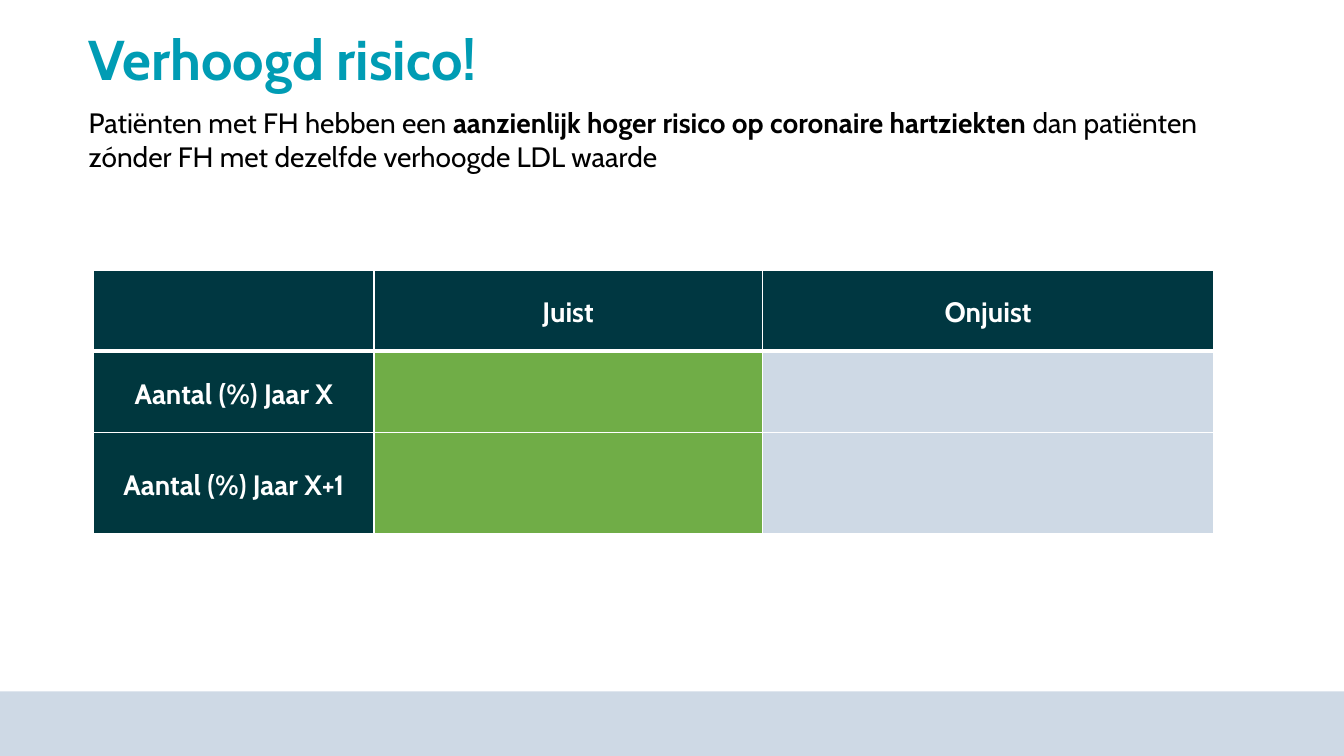
from dataclasses import dataclass

from lxml import etree
from pptx import Presentation
from pptx import util as u
from pptx.dml.color import RGBColor
from pptx.enum import shapes, text
from pptx.oxml.ns import qn

EMU_PER_PX = 9144  # 100 px to the inch


@dataclass(frozen=True)
class Theme:
    font: str = "Cabin"
    title_size: int = 40
    text_size: int = 20
    title: str = "009CB4"
    ink: str = "000000"
    white: str = "FFFFFF"
    band: str = "CED9E5"
    header: str = "003741"
    row_label: str = "00373E"
    correct: str = "70AD47"


@dataclass(frozen=True)
class Box:
    left: int
    top: int
    width: int
    height: int

    def emu(self) -> tuple[int, ...]:
        return tuple(px(v) for v in (self.left, self.top, self.width, self.height))


@dataclass(frozen=True)
class Row:
    height: int
    labels: tuple[str, str, str]
    fills: tuple[str, str, str]
    bottom_line: float = 1


THEME = Theme()
SLIDE = Box(0, 0, 1333, 750)
FOOTER_BAND = Box(0, 686, 1333, 64)
TITLE = Box(78, 27, 1068, 71)
STATEMENT = Box(78, 100, 1122, 77)
TABLE = Box(93, 268, 1111, 261)
COLUMNS = (278, 385, 448)
ANSWER_FILLS = (THEME.row_label, THEME.correct, THEME.band)
ROWS = (
    Row(80, ("", "Juist", "Onjuist"), (THEME.header,) * 3, bottom_line=3),
    Row(81, ("Aantal (%) Jaar X", "", ""), ANSWER_FILLS),
    Row(100, ("Aantal (%) Jaar X+1", "", ""), ANSWER_FILLS),
)
STATEMENT_RUNS = (
    ("Patiënten met FH hebben een ", False),
    ("aanzienlijk hoger risico op coronaire hartziekten ", True),
    ("dan patiënten zónder FH met dezelfde verhoogde LDL waarde", False),
)


def px(value: int) -> int:
    return value * EMU_PER_PX


def set_attrs(target, **values) -> None:
    for name, value in values.items():
        setattr(target, name, value)


def add_run(p, words: str, size: int, color: str, bold: bool) -> None:
    r = p.add_run()
    r.text = words
    set_attrs(r.font, name=THEME.font, size=u.Pt(size), bold=bold)
    r.font.color.rgb = RGBColor.from_string(color)


def prepare_placeholder(sp, box: Box):
    """Place a placeholder, reset its text frame and return its first paragraph."""
    set_attrs(sp, **dict(zip(("left", "top", "width", "height"), box.emu())))
    set_attrs(sp.text_frame, word_wrap=True, vertical_anchor=text.MSO_ANCHOR.TOP,
              auto_size=text.MSO_AUTO_SIZE.SHAPE_TO_FIT_TEXT)
    p = sp.text_frame.paragraphs[0]
    set_attrs(p, alignment=text.PP_ALIGN.LEFT, space_before=u.Pt(0))
    return p


def remove_bullet(p) -> None:
    pPr = p._p.get_or_add_pPr()
    pPr.set("marL", "0")
    pPr.set("indent", "0")
    etree.SubElement(pPr, qn("a:buNone"))


def set_borders(cell, bottom: float) -> None:
    tcPr = cell._tc.get_or_add_tcPr()
    widths = {"a:lnL": 1, "a:lnR": 1, "a:lnT": 1, "a:lnB": bottom}
    for i, (tag, width) in enumerate(widths.items()):
        ln = etree.Element(qn(tag), w=str(u.Pt(width)))
        fill = etree.SubElement(ln, qn("a:solidFill"))
        etree.SubElement(fill, qn("a:srgbClr"), val=THEME.white)
        tcPr.insert(i, ln)


def add_answer_table(s) -> None:
    table = s.shapes.add_table(len(ROWS), len(COLUMNS), *TABLE.emu()).table
    table.horz_banding = False
    for column, width in zip(table.columns, COLUMNS):
        column.width = px(width)
    for i, row in enumerate(ROWS):
        table.rows[i].height = px(row.height)
        # A shared edge takes the width of the line below the previous row.
        for j, (label, fill) in enumerate(zip(row.labels, row.fills)):
            cell = table.cell(i, j)
            cell.fill.solid()
            cell.fill.fore_color.rgb = RGBColor.from_string(fill)
            set_borders(cell, row.bottom_line)
            if i:
                top = cell._tc.tcPr.find(qn("a:lnT"))
                top.set("w", str(u.Pt(ROWS[i - 1].bottom_line)))
            if label:
                set_attrs(cell, vertical_anchor=text.MSO_ANCHOR.MIDDLE,
                          margin_left=px(7), margin_right=px(7),
                          margin_top=0, margin_bottom=0)
                p = cell.text_frame.paragraphs[0]
                set_attrs(p, alignment=text.PP_ALIGN.CENTER, line_spacing=1.15)
                add_run(p, label, THEME.text_size, THEME.white, True)


def add_footer_band(s) -> None:
    sp = s.shapes.add_shape(shapes.MSO_SHAPE.RECTANGLE, *FOOTER_BAND.emu())
    sp.shadow.inherit = False
    sp.fill.solid()
    sp.fill.fore_color.rgb = RGBColor.from_string(THEME.band)
    sp.line.fill.background()


def main() -> None:
    prs = Presentation()
    set_attrs(prs, slide_width=px(SLIDE.width), slide_height=px(SLIDE.height))
    s = prs.slides.add_slide(prs.slide_layouts[1])
    add_footer_band(s)

    p = prepare_placeholder(s.shapes.title, TITLE)
    p.line_spacing = 0.9
    add_run(p, "Verhoogd risico!", THEME.title_size, THEME.title, True)

    p = prepare_placeholder(s.placeholders[1], STATEMENT)
    remove_bullet(p)
    for words, bold in STATEMENT_RUNS:
        add_run(p, words, THEME.text_size, THEME.ink, bold)

    add_answer_table(s)
    prs.save("out.pptx")


if __name__ == "__main__":
    main()
